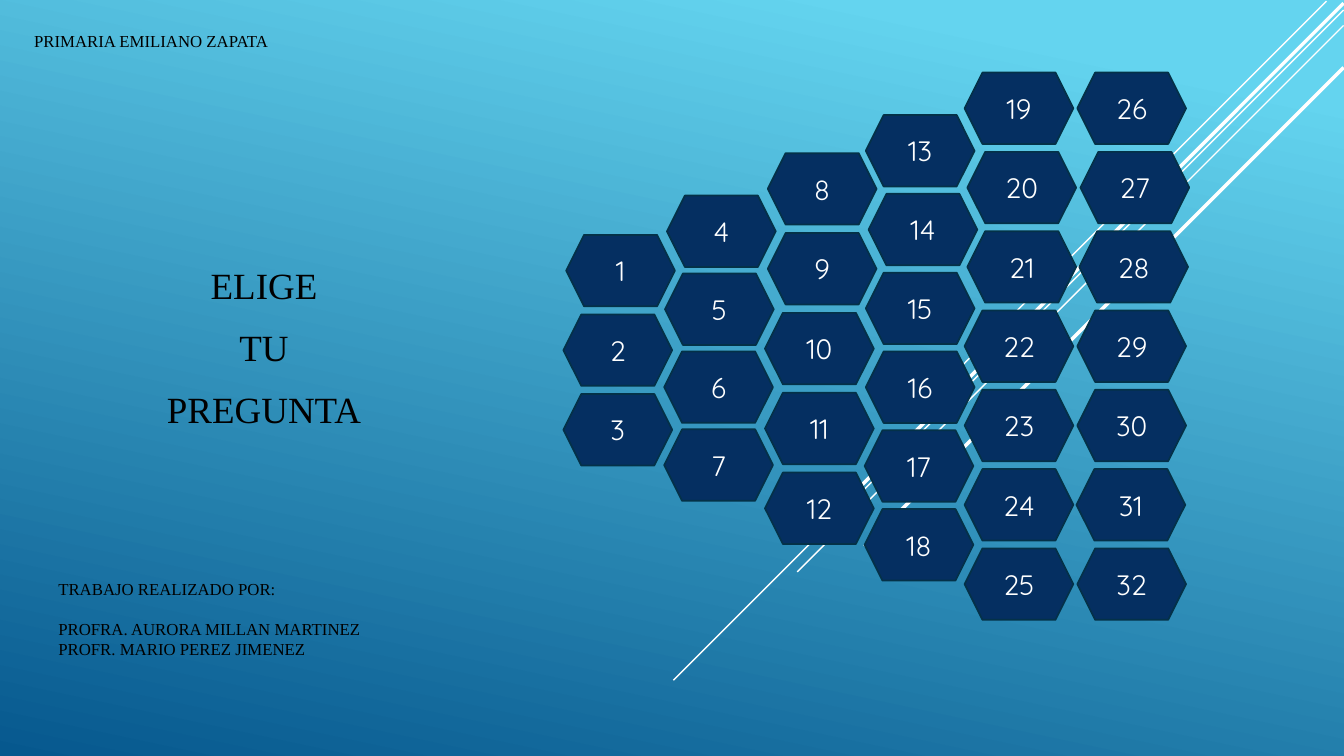
"""Build the question board slide with 32 numbered hexagons."""
from dataclasses import dataclass
from itertools import count

from pptx import Presentation
from pptx.dml.color import RGBColor
from pptx.enum.shapes import MSO_CONNECTOR, MSO_SHAPE
from pptx.enum.text import MSO_ANCHOR, PP_ALIGN
from pptx.oxml.ns import qn
from pptx.util import Cm, Pt


@dataclass(frozen=True)
class Theme:
    sky: RGBColor = RGBColor.from_string("64D4EF")
    sea: RGBColor = RGBColor.from_string("06588E")
    navy: RGBColor = RGBColor.from_string("052F61")
    edge: RGBColor = RGBColor.from_string("043148")
    white: RGBColor = RGBColor.from_string("FFFFFF")
    black: RGBColor = RGBColor.from_string("000000")
    serif: str = "Times New Roman"
    rounded: str = "Quicksand"
    prompt_size: Pt = Pt(26.4)
    number_size: Pt = Pt(20)
    small_size: Pt = Pt(12)


theme = Theme()


def style(paragraph, font_name, size, color, align=PP_ALIGN.LEFT):
    paragraph.alignment = align
    for run in paragraph.runs:
        run.font.name = font_name
        run.font.size = size
        run.font.color.rgb = color


def add_text(slide, box, lines, size, align=PP_ALIGN.LEFT):
    frame = slide.shapes.add_textbox(*map(Cm, box)).text_frame
    frame.word_wrap = True
    frame.text = "\n".join(lines)
    for paragraph in frame.paragraphs:
        style(paragraph, theme.serif, size, theme.black, align)
    return frame.paragraphs


deck = Presentation()
deck.slide_width, deck.slide_height = Cm(33.87), Cm(19.05)
slide = deck.slides.add_slide(deck.slide_layouts[6])

backdrop = slide.background.fill
backdrop.gradient()
backdrop.gradient_angle = 258
for stop, position, color in zip(backdrop.gradient_stops, (0.1, 1), (theme.sky, theme.sea)):
    stop.position = position
    stop.color.rgb = color

rays = [
    (33.43, 0.03, 10.59, 1),
    (33.86, 0.25, 16.89, 1),
    (33.86, 0.64, 13.77, 1),
    (33.86, 0.08, 13.49, 2.5),
    (33.86, 1.7, 12.07, 2.5),
]
for x, y, reach, weight in rays:
    ray = slide.shapes.add_connector(
        MSO_CONNECTOR.STRAIGHT, Cm(x), Cm(y), Cm(x - reach), Cm(y + reach))
    ray.line.color.rgb = theme.white
    ray.line.width = Pt(weight)
    properties = ray.element.spPr
    properties.append(properties.makeelement(qn("a:effectLst"), {}))

prompt = add_text(slide, (0.99, 6.5, 11.33, 4.14), ["ELIGE", "TU", "PREGUNTA"],
                  theme.prompt_size, PP_ALIGN.CENTER)
for line in prompt:
    line.space_after = Pt(6)
for line in prompt[1:]:
    line.space_before = Pt(6.5)

# Each column: first top, last top, left of every hexagon.
columns = [
    (5.92, 9.93, [14.27, 14.2, 14.2]),
    (4.93, 10.82, [16.81, 16.76, 16.74, 16.74]),
    (3.86, 11.91, [19.35, 19.35, 19.28, 19.28, 19.28]),
    (2.9, 12.83, [21.82, 21.89, 21.82, 21.82, 21.79, 21.79]),
    (1.83, 13.82, [24.31, 24.38, 24.38, 24.31, 24.31, 24.31, 24.31]),
    (1.83, 13.82, [27.15, 27.23, 27.2, 27.15, 27.15, 27.13, 27.15]),
]
numbers = count(1)
for first_top, last_top, lefts in columns:
    pitch = (last_top - first_top) / (len(lefts) - 1)
    for row, left in enumerate(lefts):
        question = slide.shapes.add_shape(
            MSO_SHAPE.HEXAGON, Cm(left), Cm(first_top + row * pitch), Cm(2.74), Cm(1.8))
        question.shadow.inherit = False
        question.fill.solid()
        question.fill.fore_color.rgb = theme.navy
        question.line.color.rgb = theme.edge
        question.line.width = Pt(1.25)
        label = question.text_frame
        label.word_wrap = False
        label.vertical_anchor = MSO_ANCHOR.MIDDLE
        label.text = str(next(numbers))
        style(label.paragraphs[0], theme.rounded, theme.number_size, theme.white,
              PP_ALIGN.CENTER)

authors = add_text(slide, (1.22, 14.45, 16.13, 2.31), [
    "TRABAJO REALIZADO POR:",
    "PROFRA. AURORA MILLAN MARTINEZ",
    "PROFR. MARIO PEREZ JIMENEZ",
], theme.small_size)
authors[1].space_before = Pt(14.4)

add_text(slide, (0.61, 0.66, 16.13, 1.3), ["PRIMARIA EMILIANO ZAPATA"], theme.small_size)

deck.save("out.pptx")
